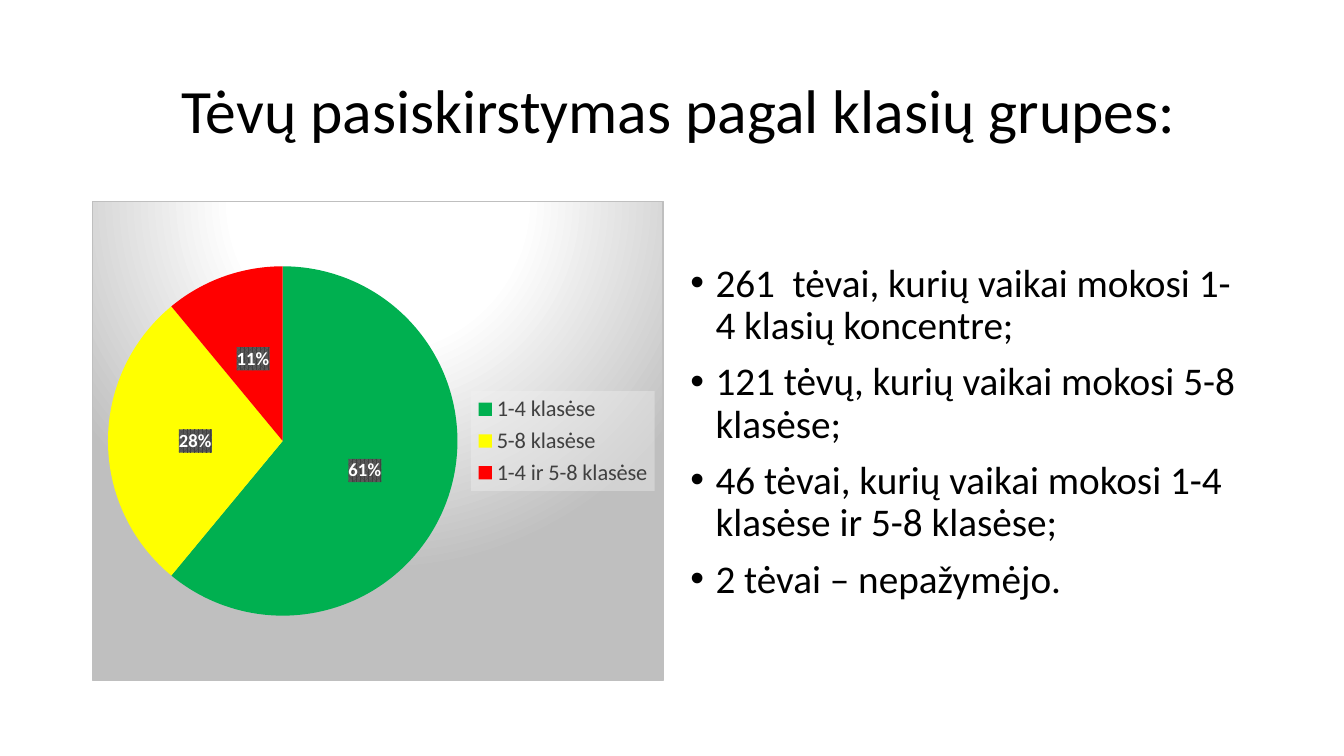
"""Build a slide with a pie chart of parents by class group and a bullet list."""
import pptx
import pptx.chart.data
import pptx.dml.color
import pptx.enum.chart
import pptx.enum.text
import pptx.oxml
import pptx.oxml.ns
import pptx.util

Pt = pptx.util.Pt
NAMESPACES = pptx.oxml.ns.nsdecls("a", "c")


def style_font(font, size, color, bold=False):
    font.name = "Calibri"
    font.size = Pt(size)
    font.bold = bold
    font.color.rgb = pptx.dml.color.RGBColor.from_string(color)


def chart_xml(tag, content):
    return pptx.oxml.parse_xml(f"<c:{tag} {NAMESPACES}>{content}</c:{tag}>")


presentation = pptx.Presentation()
presentation.slide_width = Pt(960)
presentation.slide_height = Pt(540)
slide = presentation.slides.add_slide(presentation.slide_layouts[5])

title = slide.shapes.title
title.left, title.top, title.width, title.height = Pt(66), Pt(28.75), Pt(828), Pt(104.4)
title.text_frame.text = " Tėvų pasiskirstymas pagal klasių grupes:"
title.text_frame.auto_size = pptx.enum.text.MSO_AUTO_SIZE.NONE
title.text_frame.vertical_anchor = pptx.enum.text.MSO_ANCHOR.MIDDLE
title_paragraph = title.text_frame.paragraphs[0]
title_paragraph.alignment = pptx.enum.text.PP_ALIGN.CENTER
title_paragraph.line_spacing = 0.9
style_font(title_paragraph.font, 44, "000000")

bullets = [
    "261  tėvai, kurių vaikai mokosi 1-4 klasių koncentre;",
    "121 tėvų, kurių vaikai mokosi 5-8 klasėse;",
    "46 tėvai, kurių vaikai mokosi 1-4 klasėse ir 5-8 klasėse;",
    "2 tėvai – nepažymėjo.",
]
body = slide.shapes.add_textbox(Pt(486), Pt(143.75), Pt(408), Pt(342.6))
body.text_frame.word_wrap = True
body.text_frame.margin_top = Pt(44.3)
body.text_frame.text = "\n".join(bullets)
for paragraph in body.text_frame.paragraphs:
    paragraph.line_spacing = 0.9
    paragraph.space_before = Pt(10)
    style_font(paragraph.font, 28, "000000")
    properties = paragraph._p.get_or_add_pPr()
    properties.set("marL", str(Pt(18)))
    properties.set("indent", str(-Pt(18)))
    for bullet_part in ('<a:buFont {} typeface="Arial"/>', '<a:buChar {} char="•"/>'):
        bullet = pptx.oxml.parse_xml(bullet_part.format(NAMESPACES))
        properties.insert_element_before(bullet, "a:tabLst", "a:defRPr", "a:extLst")

groups = [
    ("1-4 klasėse", 61, "00B050"),
    ("5-8 klasėse", 28, "FFFF00"),
    ("1-4 ir 5-8 klasėse", 11, "FF0000"),
]
chart_data = pptx.chart.data.CategoryChartData()
chart_data.categories = [name for name, value, color in groups]
chart_data.add_series("Series 1", [value for name, value, color in groups])
chart = slide.shapes.add_chart(
    pptx.enum.chart.XL_CHART_TYPE.PIE, Pt(66), Pt(143.75), Pt(408), Pt(342.6), chart_data
).chart
chart.has_title = False
style_font(chart.font, 10, "000000")

plot = chart.plots[0]
for index, (name, value, color) in enumerate(groups):
    fill = plot.series[0].points[index].format.fill
    fill.solid()
    fill.fore_color.rgb = pptx.dml.color.RGBColor.from_string(color)

labels = plot.series[0].data_labels
labels.show_percentage = True
labels.show_value = False
labels.number_format = "0%"
labels.number_format_is_linked = False
labels.position = pptx.enum.chart.XL_LABEL_POSITION.CENTER
style_font(labels.font, 13.3, "FFFFFF", bold=True)
labels._element.find(pptx.oxml.ns.qn("c:txPr")).addprevious(chart_xml("spPr", """
<a:pattFill prst="pct75"><a:fgClr><a:srgbClr val="404040"/></a:fgClr>
<a:bgClr><a:srgbClr val="595959"/></a:bgClr></a:pattFill>"""))

chart.has_legend = True
chart.legend.position = pptx.enum.chart.XL_LEGEND_POSITION.RIGHT
chart.legend.include_in_layout = False
style_font(chart.legend.font, 16, "404040")
chart.legend._element.find(pptx.oxml.ns.qn("c:txPr")).addprevious(chart_xml("spPr", """
<a:solidFill><a:srgbClr val="F2F2F2"><a:alpha val="39000"/></a:srgbClr></a:solidFill>"""))

plot_area = plot._element.getparent()
for layout in plot_area.findall(pptx.oxml.ns.qn("c:layout")):
    plot_area.remove(layout)
plot_area.insert(0, chart_xml("layout", """
<c:manualLayout><c:layoutTarget val="inner"/><c:xMode val="edge"/><c:yMode val="edge"/>
<c:x val="0.026"/><c:y val="0.135"/><c:w val="0.614"/><c:h val="0.73"/></c:manualLayout>"""))

chart._chartSpace.find(pptx.oxml.ns.qn("c:chart")).addnext(chart_xml("spPr", """
<a:gradFill><a:gsLst>
<a:gs pos="0"><a:srgbClr val="FFFFFF"/></a:gs>
<a:gs pos="39000"><a:srgbClr val="FFFFFF"/></a:gs>
<a:gs pos="100000"><a:srgbClr val="BFBFBF"/></a:gs></a:gsLst>
<a:path path="circle"><a:fillToRect l="50000" t="-80000" r="50000" b="180000"/></a:path>
</a:gradFill>
<a:ln w="9525"><a:solidFill><a:srgbClr val="BFBFBF"/></a:solidFill></a:ln>"""))

presentation.save("out.pptx")
